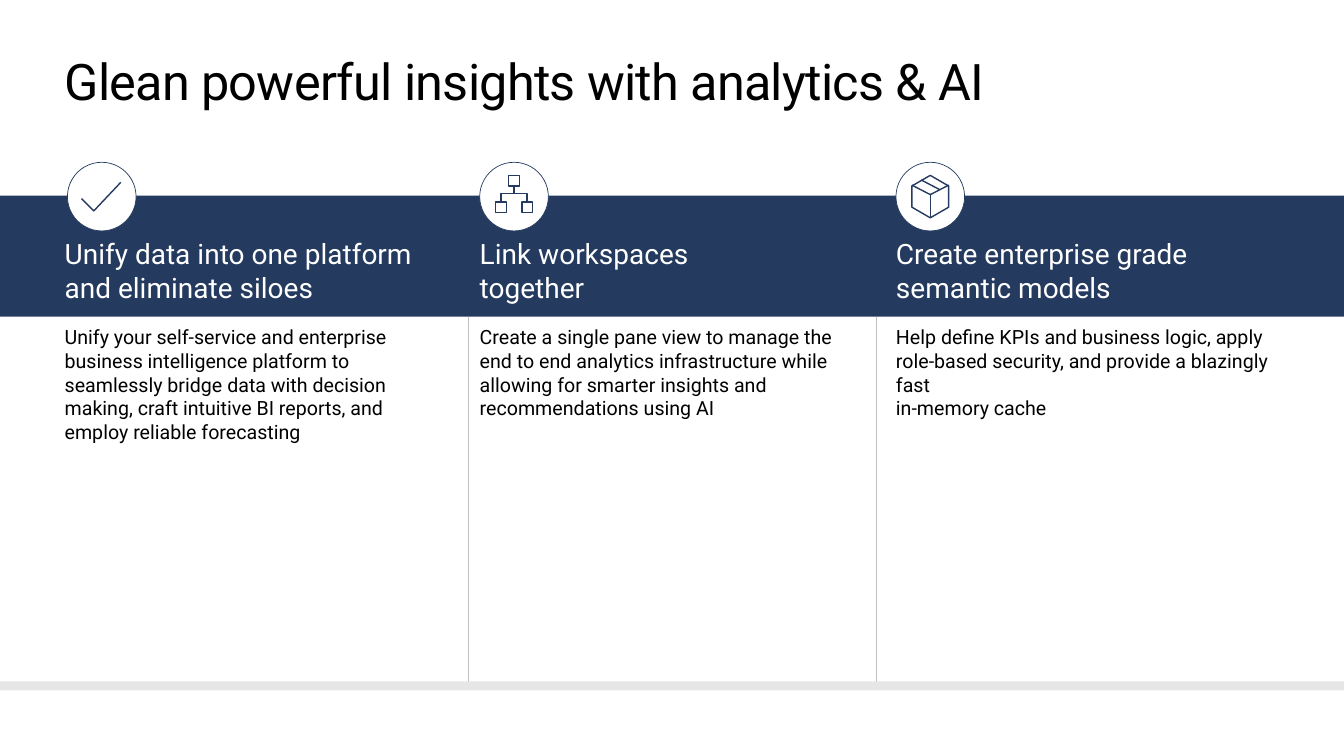
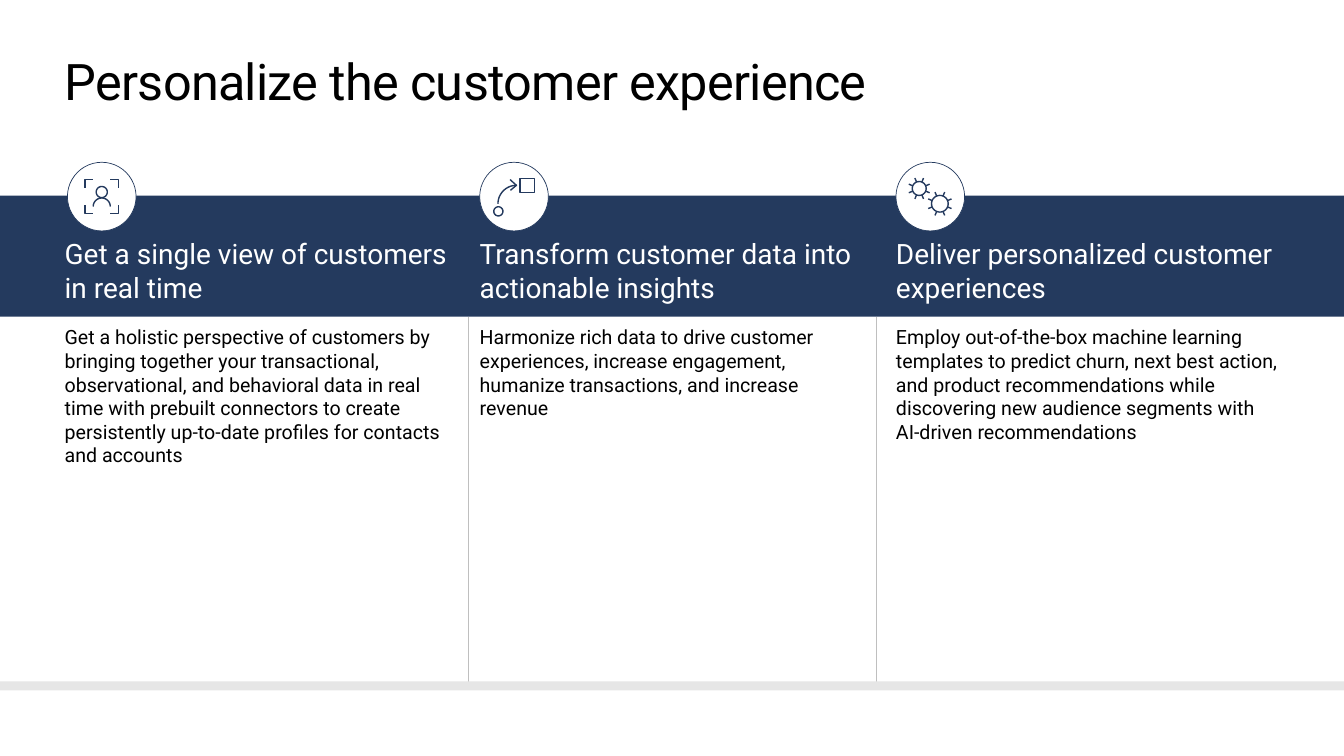
from dataclasses import dataclass
from math import cos, radians, sin

from lxml import etree
from pptx import Presentation
from pptx.dml.color import RGBColor
from pptx.enum.dml import MSO_LINE
from pptx.enum.shapes import MSO_CONNECTOR, MSO_SHAPE
from pptx.oxml.ns import qn
from pptx.util import Cm, Pt

RECTANGLE, OVAL = MSO_SHAPE.RECTANGLE, MSO_SHAPE.OVAL
STRAIGHT = MSO_CONNECTOR.STRAIGHT
DOTTED = MSO_LINE.ROUND_DOT


@dataclass(frozen=True)
class Theme:
    font: str = "Roboto"
    navy: RGBColor = RGBColor(0x24, 0x3A, 0x5E)
    white: RGBColor = RGBColor(0xFF, 0xFF, 0xFF)
    black: RGBColor = RGBColor(0x00, 0x00, 0x00)
    divider: RGBColor = RGBColor(0xBF, 0xBF, 0xBF)
    footer: RGBColor = RGBColor(0xE6, 0xE6, 0xE6)
    title_size: Pt = Pt(36)
    heading_size: Pt = Pt(20)
    body_size: Pt = Pt(14)


theme = Theme()

# Layout in centimetres
SLIDE_WIDTH, SLIDE_HEIGHT = 33.87, 19.05
COLUMN_LEFTS = (1.63, 12.09, 22.58)
COLUMN_WIDTH = 9.65
DIVIDER_LEFTS = (11.81, 22.07)
BAND_TOP, BAND_HEIGHT = 4.93, 3.05
FOOTER_TOP, FOOTER_HEIGHT = 17.17, 0.23
CIRCLE_LEFTS = (1.7, 12.09, 22.58)
CIRCLE_TOP, CIRCLE_SIZE = 4.09, 1.73


def add_text(slide, text, left, top, width, height, size, color):
    box = slide.shapes.add_textbox(Cm(left), Cm(top), Cm(width), Cm(height))
    frame = box.text_frame
    frame.word_wrap = True
    frame.margin_left = frame.margin_right = 0
    frame.margin_top = frame.margin_bottom = 0
    frame.text = text
    for paragraph in frame.paragraphs:
        for run in paragraph.runs:
            run.font.name = theme.font
            run.font.size = size
            run.font.color.rgb = color
    return frame


def arc(x, y, radius, start=0, end=360, steps=32):
    """Points on an arc; angles run clockwise from the right."""
    angles = [radians(start + (end - start) * step / steps) for step in range(steps + 1)]
    return [(x + radius * cos(angle), y + radius * sin(angle)) for angle in angles]


# Icons: strokes in thousandths of a centimetre around the circle centre
check_icon = [[(480, -360), (-200, 360), (-510, 50)]]

hierarchy_icon = [arc(x, y, 190, 45, 405, 4) for x, y in ((0, -400), (-330, 270), (330, 270))]
hierarchy_icon += [
    [(0, -265), (0, -75)],
    [(-330, 135), (-330, -75), (330, -75), (330, 135)],
]

package_icon = [
    arc(0, 0, 535, -90, 270, 6),
    [(-465, -290), (0, -50), (465, -290)],
    [(0, -50), (0, 535)],
    [(-230, -420), (230, -180)],
]

profile_icon = [arc(0, -115, 140), arc(0, 250, 215, 180, 360)]
for across in (-1, 1):
    for down in (-1, 1):
        profile_icon.append([
            (across * 425, down * 220), (across * 425, down * 425), (across * 220, down * 425)])

journey_icon = [
    arc(60, 180, 465, 180, 270),
    [(-90, -160), (60, -285), (-100, -430)],
    arc(-395, 370, 115),
    arc(330, -280, 255, 45, 405, 4),
]

gears_icon = []
for x, y, radius, tooth_end in ((-280, -205, 175, 285), (240, 180, 210, 318)):
    gears_icon.append(arc(x, y, radius))
    inner = arc(x, y, radius, 22.5, 382.5, 8)
    outer = arc(x, y, tooth_end, 22.5, 382.5, 8)
    gears_icon += [list(tooth) for tooth in zip(inner[:8], outer[:8])]

# Content: title, then (icon, heading, heading width, body) for each column
slides_content = [
    ("Glean powerful insights with analytics & AI", [
        (check_icon, "Unify data into one platform and eliminate siloes", COLUMN_WIDTH,
         "Unify your self-service and enterprise business intelligence platform to "
         "seamlessly bridge data with decision making, craft intuitive BI reports, and "
         "employ reliable forecasting"),
        (hierarchy_icon, "Link workspaces together", 6.2,
         "Create a single pane view to manage the end to end analytics infrastructure "
         "while allowing for smarter insights and recommendations using AI"),
        (package_icon, "Create enterprise grade semantic models", COLUMN_WIDTH,
         "Help define KPIs and business logic, apply role-based security, and provide a "
         "blazingly fast\nin-memory cache"),
    ]),
    ("Personalize the customer experience", [
        (profile_icon, "Get a single view of customers in real time", COLUMN_WIDTH,
         "Get a holistic perspective of customers by bringing together your "
         "transactional, observational, and behavioral data in real time with prebuilt "
         "connectors to create persistently up-to-date profiles for contacts and accounts"),
        (journey_icon, "Transform customer data into actionable insights", 9.45,
         "Harmonize rich data to drive customer experiences, increase engagement, "
         "humanize transactions, and increase revenue"),
        (gears_icon, "Deliver personalized customer experiences", COLUMN_WIDTH,
         "Employ out-of-the-box machine learning templates to predict churn, next best "
         "action, and product recommendations while discovering new audience segments "
         "with AI-driven recommendations"),
    ]),
]

presentation = Presentation()
presentation.slide_width = Cm(SLIDE_WIDTH)
presentation.slide_height = Cm(SLIDE_HEIGHT)
blank_layout = presentation.slide_layouts[6]

for title, columns in slides_content:
    slide = presentation.slides.add_slide(blank_layout)

    # Title
    title_frame = add_text(slide, title, COLUMN_LEFTS[0], 1.27, 30.61, 1.55,
                           theme.title_size, theme.black)
    title_frame.paragraphs[0].runs[0].font._element.set("spc", "-50")

    # Column dividers
    for left in DIVIDER_LEFTS:
        divider = slide.shapes.add_connector(
            STRAIGHT, Cm(left), Cm(FOOTER_TOP), Cm(left), Cm(BAND_TOP + BAND_HEIGHT))
        divider.line.color.rgb = theme.divider
        divider.line.width = Pt(0.25)
        divider.line.dash_style = DOTTED
        etree.SubElement(divider._element.spPr, qn("a:effectLst"))

    # Heading band and footer strip
    for top, height, color in ((BAND_TOP, BAND_HEIGHT, theme.navy),
                               (FOOTER_TOP, FOOTER_HEIGHT, theme.footer)):
        band = slide.shapes.add_shape(
            RECTANGLE, 0, Cm(top), presentation.slide_width, Cm(height))
        band.shadow.inherit = False
        band.fill.solid()
        band.fill.fore_color.rgb = color
        band.line.fill.background()

    # Columns
    for left, circle_left, column in zip(COLUMN_LEFTS, CIRCLE_LEFTS, columns):
        strokes, heading, heading_width, body = column
        add_text(slide, heading, left, 5.97, heading_width, 1.7,
                 theme.heading_size, theme.white)
        add_text(slide, body, left, 8.2, COLUMN_WIDTH, 7.87, theme.body_size, theme.black)

        circle = slide.shapes.add_shape(
            OVAL, Cm(circle_left), Cm(CIRCLE_TOP), Cm(CIRCLE_SIZE), Cm(CIRCLE_SIZE))
        circle.shadow.inherit = False
        circle.fill.solid()
        circle.fill.fore_color.rgb = theme.white
        circle.line.color.rgb = theme.navy
        circle.line.width = Pt(0.5)

        builder = slide.shapes.build_freeform(*strokes[0][0], scale=Cm(0.001))
        builder.add_line_segments(strokes[0][1:], close=False)
        for stroke in strokes[1:]:
            builder.move_to(*stroke[0])
            builder.add_line_segments(stroke[1:], close=False)
        icon = builder.convert_to_shape(
            Cm(circle_left + CIRCLE_SIZE / 2), Cm(CIRCLE_TOP + CIRCLE_SIZE / 2))
        icon.shadow.inherit = False
        icon.fill.background()
        icon.line.color.rgb = theme.navy
        icon.line.width = Pt(1)

presentation.save("out.pptx")
